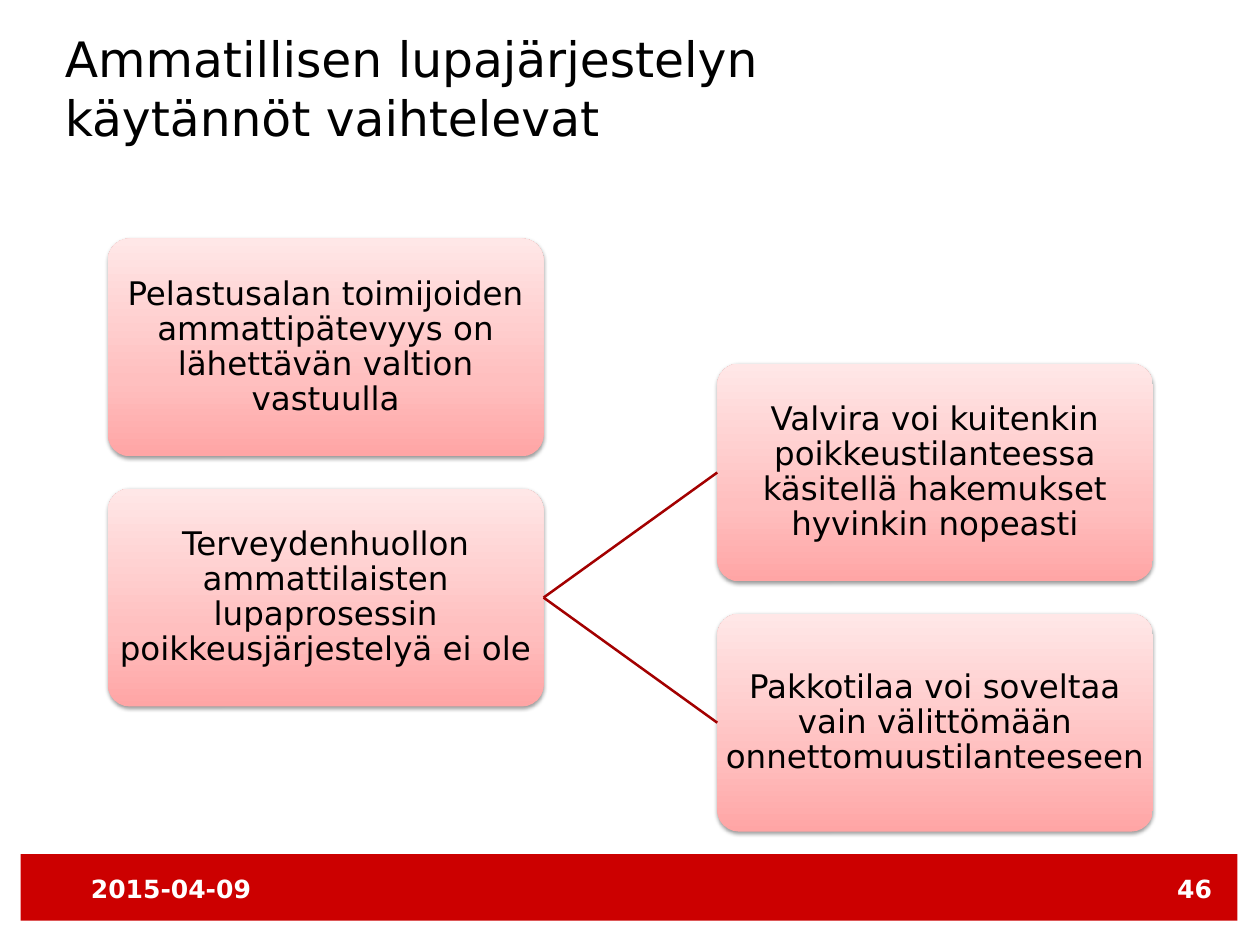
import copy
from dataclasses import dataclass

import pptx
import pptx.dml.color
import pptx.enum.shapes
import pptx.enum.text
import pptx.oxml
import pptx.oxml.ns
import pptx.util

Inches = pptx.util.Inches
Pt = pptx.util.Pt
RGB = pptx.dml.color.RGBColor.from_string
Shape = pptx.enum.shapes.MSO_SHAPE
Align = pptx.enum.text.PP_ALIGN
Anchor = pptx.enum.text.MSO_ANCHOR
qn = pptx.oxml.ns.qn


@dataclass
class Theme:
    font: str = "DejaVu Sans"
    ink: str = "000000"
    white: str = "FFFFFF"
    band: str = "CC0000"
    link: str = "A30000"
    gradient: tuple = ((0, "FFA5A5"), (0.35, "FFBFBF"), (1, "FFE7E7"))
    title_size: int = 39
    card_size: int = 26
    footer_size: int = 20


theme = Theme()


def write(shape, text, size, color, bold=False, inset=(0, 0), align=Align.LEFT,
          anchor=Anchor.TOP, wrap=True, spacing=1.0):
    """Fill a shape with one formatted paragraph."""
    frame = shape.text_frame
    across, down = Inches(inset[0]), Inches(inset[1])
    frame_format = {
        "margin_left": across, "margin_right": across,
        "margin_top": down, "margin_bottom": down,
        "vertical_anchor": anchor, "word_wrap": wrap,
        "auto_size": pptx.enum.text.MSO_AUTO_SIZE.NONE,
    }
    for name, value in frame_format.items():
        setattr(frame, name, value)
    para = frame.paragraphs[0]
    para.alignment = align
    para.line_spacing = spacing
    span = para.add_run()
    span.text = text
    for name, value in {"name": theme.font, "size": Pt(size), "bold": bold}.items():
        setattr(span.font, name, value)
    span.font.color.rgb = RGB(color)


deck = pptx.Presentation()
deck.slide_width = Inches(14)
deck.slide_height = Inches(10.5)
page = deck.slides.add_slide(deck.slide_layouts[5])

# Footer band with date and page number
band = page.shapes.add_shape(Shape.RECTANGLE, Inches(0.23), Inches(9.49),
                             Inches(13.52), Inches(0.74))
band.shadow.inherit = False
band.fill.solid()
band.fill.fore_color.rgb = RGB(theme.band)
band.line.fill.background()
for text, left, width in (("2015-04-09", 0.87, 2.15), ("46", 12.94, 0.83)):
    box = page.shapes.add_textbox(Inches(left), Inches(9.63), Inches(width), Inches(0.48))
    write(box, text, theme.footer_size, theme.white, bold=True,
          inset=(0.14, 0.07), wrap=False)

# Title
title = page.shapes.title
for name, value in {"left": 0.72, "top": 0.32, "width": 10.09, "height": 1.9}.items():
    setattr(title, name, Inches(value))
write(title, "Ammatillisen lupajärjestelyn käytännöt vaihtelevat",
      theme.title_size, theme.ink)

# Cards: two columns, the right one half a step lower
card_width, card_height = 4.84, 2.42
left_column, right_column = 1.2, 7.97
first_top, step = 2.65, 2.78
cards = (
    ("Pelastusalan toimijoiden ammattipätevyys on lähettävän valtion vastuulla",
     left_column, 0),
    ("Terveydenhuollon ammattilaisten lupaprosessin poikkeusjärjestelyä ei ole",
     left_column, 1),
    ("Valvira voi kuitenkin poikkeustilanteessa käsitellä hakemukset hyvinkin nopeasti",
     right_column, 0.5),
    ("Pakkotilaa voi soveltaa vain välittömään onnettomuustilanteeseen",
     right_column, 1.5),
)
shadow_xml = (
    '<a:outerShdw xmlns:a="http://schemas.openxmlformats.org/drawingml/2006/main" '
    f'blurRad="{Pt(3.1)}" dist="{Pt(1.6)}" dir="5400000" rotWithShape="0">'
    '<a:srgbClr val="000000"><a:alpha val="38000"/></a:srgbClr></a:outerShdw>'
)
for text, left, row in cards:
    card = page.shapes.add_shape(Shape.ROUNDED_RECTANGLE, Inches(left),
                                 Inches(first_top + row * step),
                                 Inches(card_width), Inches(card_height))
    card.adjustments[0] = 0.1
    card.line.fill.background()

    # Three-stop gradient, running upwards
    card.fill.gradient()
    card.fill.gradient_angle = 90
    properties = card._element.spPr
    stop_list = properties.find(qn("a:gradFill")).find(qn("a:gsLst"))
    stop_list.append(copy.deepcopy(stop_list[0]))
    for stop, (position, color) in zip(card.fill.gradient_stops, theme.gradient):
        stop.position = position
        stop.color.rgb = RGB(color)

    # Soft shadow below
    card.shadow.inherit = False
    properties.find(qn("a:effectLst")).append(pptx.oxml.parse_xml(shadow_xml))

    write(card, text, theme.card_size, theme.ink, inset=(0.02, 0.02),
          align=Align.CENTER, anchor=Anchor.MIDDLE, spacing=0.9)

# Links from the second left card to both right cards
middle = first_top + card_height / 2
for row in (0.5, 1.5):
    link = page.shapes.add_connector(
        pptx.enum.shapes.MSO_CONNECTOR.STRAIGHT,
        Inches(left_column + card_width), Inches(middle + step),
        Inches(right_column), Inches(middle + row * step))
    link.line.color.rgb = RGB(theme.link)
    link.line.width = Pt(2)
    link._element.spPr.append(pptx.oxml.parse_xml(
        '<a:effectLst xmlns:a="http://schemas.openxmlformats.org/drawingml/2006/main"/>'))

deck.save("out.pptx")
